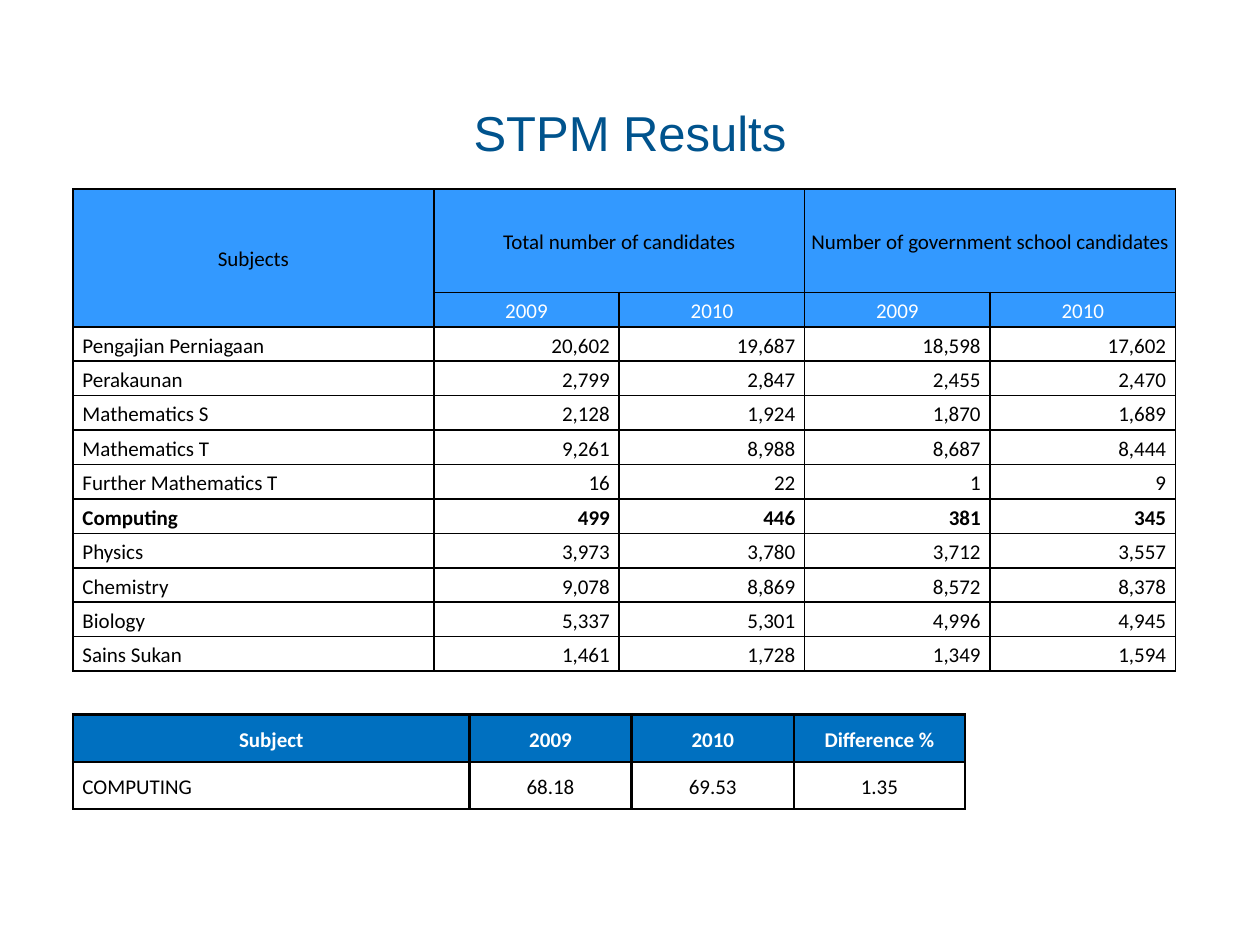
from pptx import Presentation
from pptx.dml.color import RGBColor
from pptx.enum.text import MSO_ANCHOR as Anchor, PP_ALIGN as Align
from pptx.oxml import parse_xml
from pptx.oxml.ns import nsdecls
from pptx.util import Inches, Pt

BLACK, WHITE = "000000", "FFFFFF"
TITLE_BLUE, HEADER_BLUE, DEEP_BLUE = "00538D", "3399FF", "0070C0"
LEFT = 0.58
SIDE_PAD = 0.075

CANDIDATES = [
    ("Subjects", "Total number of candidates", "",
     "Number of government school candidates", ""),
    ("", "2009", "2010", "2009", "2010"),
    ("Pengajian Perniagaan", "20,602", "19,687", "18,598", "17,602"),
    ("Perakaunan", "2,799", "2,847", "2,455", "2,470"),
    ("Mathematics S", "2,128", "1,924", "1,870", "1,689"),
    ("Mathematics T", "9,261", "8,988", "8,687", "8,444"),
    ("Further Mathematics T", "16", "22", "1", "9"),
    ("Computing", "499", "446", "381", "345"),
    ("Physics", "3,973", "3,780", "3,712", "3,557"),
    ("Chemistry", "9,078", "8,869", "8,572", "8,378"),
    ("Biology", "5,337", "5,301", "4,996", "4,945"),
    ("Sains Sukan", "1,461", "1,728", "1,349", "1,594"),
]
PASS_RATES = [
    ("Subject", "2009", "2010", "Difference %"),
    ("COMPUTING", "68.18", "69.53", "1.35"),
]


def rgb(color):
    return RGBColor.from_string(color)


def style_text(paragraph, font_name, size, color, align, bold=False):
    paragraph.alignment = align
    for run in paragraph.runs:
        run.font.name = font_name
        run.font.size = Pt(size)
        run.font.bold = bold
        run.font.color.rgb = rgb(color)


def set_borders(cell, width):
    properties = cell._tc.get_or_add_tcPr()
    for side in ("lnL", "lnR", "lnT", "lnB"):
        properties.append(parse_xml(
            f'<a:{side} {nsdecls("a")} w="{Pt(width)}"><a:solidFill>'
            f'<a:srgbClr val="{BLACK}"/></a:solidFill></a:{side}>'))


def fill_cell(cell, words, align, color=BLACK, fill=None, bold=False):
    cell.vertical_anchor = Anchor.MIDDLE
    cell.margin_top = cell.margin_bottom = 0
    cell.margin_left = cell.margin_right = (
        0 if align == Align.CENTER else Inches(SIDE_PAD))
    if fill:
        cell.fill.solid()
        cell.fill.fore_color.rgb = rgb(fill)
    else:
        cell.fill.background()
    cell.text_frame.text = words
    paragraph = cell.text_frame.paragraphs[0]
    paragraph.line_spacing = 1.15
    style_text(paragraph, "Calibri", 12, color, align, bold)


def add_grid(slide, box, column_shares, row_shares, border):
    """Add a bordered table whose columns and rows share out the box."""
    left, top, width, height = box
    table = slide.shapes.add_table(
        len(row_shares), len(column_shares), Inches(left), Inches(top),
        Inches(width), Inches(height)).table
    table.first_row = table.horz_banding = False
    for column, share in zip(table.columns, column_shares):
        column.width = Inches(width * share / sum(column_shares))
    for row, share in zip(table.rows, row_shares):
        row.height = Inches(height * share / sum(row_shares))
    for cell in table.iter_cells():
        set_borders(cell, border)
    return table


def add_title(slide, box):
    title = slide.shapes.add_textbox(*map(Inches, box)).text_frame
    title.word_wrap = True
    title.vertical_anchor = Anchor.MIDDLE
    title.text = "STPM Results"
    style_text(title.paragraphs[0], "Arial", 28, TITLE_BLUE, Align.CENTER)


def add_candidates(slide, box):
    table = add_grid(slide, box, [2.86] + [1.47] * 4, [3] + [1] * 11, 1)
    for r, record in enumerate(CANDIDATES):
        for c, words in enumerate(record):
            cell = table.cell(r, c)
            if r < 2:
                fill_cell(cell, words, Align.CENTER,
                          WHITE if r else BLACK, HEADER_BLUE)
            else:
                fill_cell(cell, words, Align.RIGHT if c else Align.LEFT,
                          bold=record[0] == "Computing")
    table.cell(0, 0).merge(table.cell(1, 0))
    for first in (1, 3):
        table.cell(0, first).merge(table.cell(0, first + 1))


def add_pass_rates(slide, box):
    table = add_grid(slide, box, [3.15, 1.29, 1.29, 1.36], [1, 1], 1.5)
    header, values = PASS_RATES
    for c, words in enumerate(header):
        fill_cell(table.cell(0, c), words, Align.CENTER, WHITE, DEEP_BLUE, True)
    for c, words in enumerate(values):
        fill_cell(table.cell(1, c), words, Align.CENTER if c else Align.LEFT)


def main():
    deck = Presentation()
    deck.slide_width, deck.slide_height = Inches(10), Inches(7.5)
    slide = deck.slides.add_slide(deck.slide_layouts[6])
    add_candidates(slide, (LEFT, 1.5, 8.75, 3.83))
    add_title(slide, (0.75, 0.67, 8.5, 0.75))
    add_pass_rates(slide, (LEFT, 5.67, 7.08, 0.75))
    deck.save("out.pptx")


if __name__ == "__main__":
    main()
